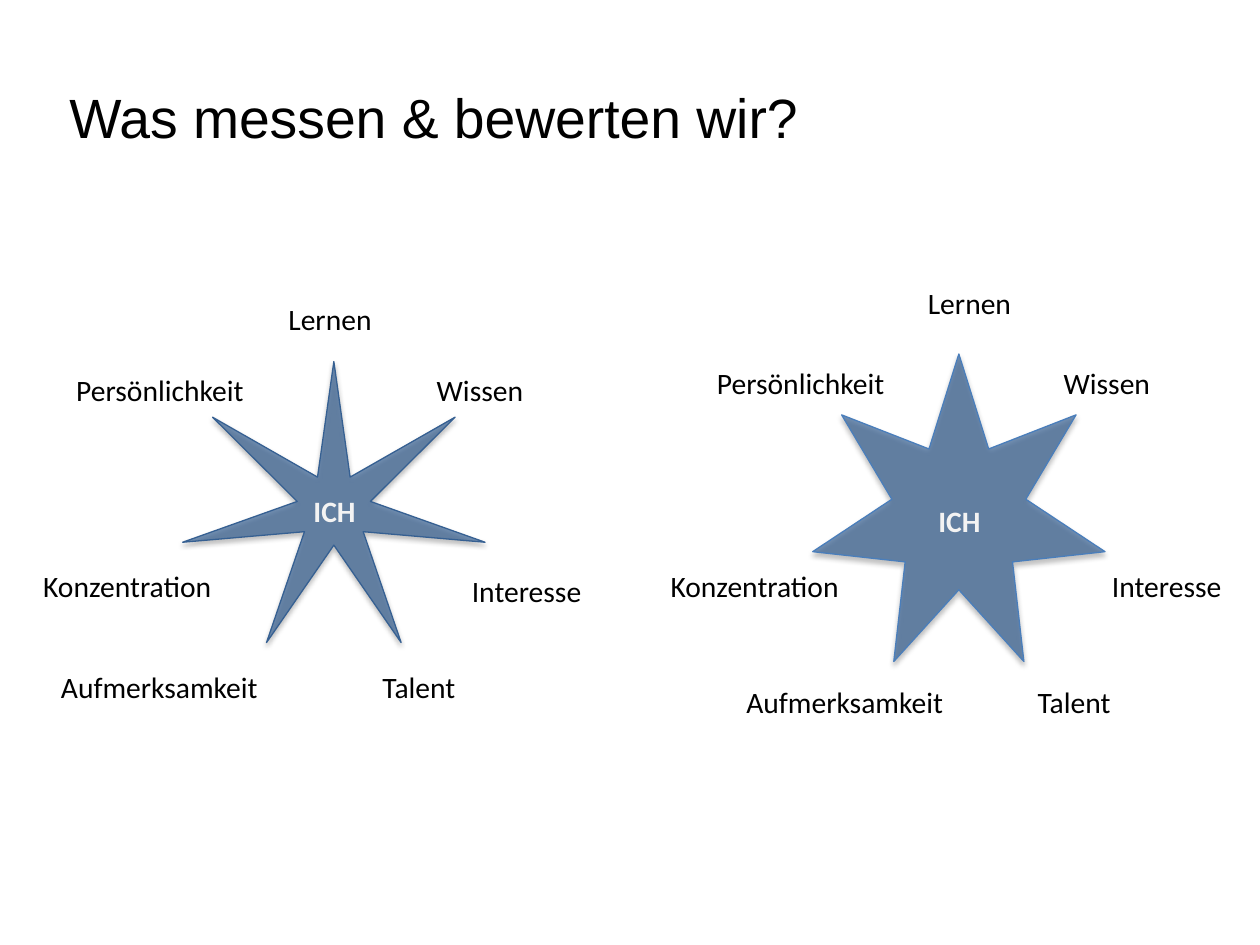
from dataclasses import dataclass

import pptx
import pptx.dml.color
import pptx.enum.shapes
import pptx.enum.text
import pptx.oxml
import pptx.oxml.ns
import pptx.util
from pptx.dml.color import RGBColor
from pptx.util import Inches

BLACK = RGBColor(0x00, 0x00, 0x00)
PALE = RGBColor(0xF3, 0xF3, 0xF3)
STAR_BLUE = RGBColor(0x36, 0x60, 0x92)
OUTLINE_BLUE = RGBColor(0x4A, 0x7E, 0xBB)

ALPHA_XML = '<a:alpha %s val="69000"/>' % pptx.oxml.ns.nsdecls("a")
SHADOW_XML = (
    '<a:outerShdw %s blurRad="38100" dist="22860" dir="5400000" rotWithShape="0">'
    '<a:srgbClr val="000000"><a:alpha val="35000"/></a:srgbClr></a:outerShdw>'
    % pptx.oxml.ns.nsdecls("a")
)


@dataclass
class Box:
    left: float
    top: float
    width: float
    height: float

    def lengths(self) -> list:
        return [Inches(n) for n in (self.left, self.top, self.width, self.height)]


@dataclass
class Label:
    text: str
    left: float
    top: float
    width: float


@dataclass
class StarDiagram:
    star: Box
    sharpness: float
    outline: RGBColor
    label_height: float
    inset: float
    labels: list[Label]
    center: Box


def add_text(shapes, box: Box, text: str, inset: float, size: float,
             font_name: str = "Calibri", color: RGBColor = BLACK, bold: bool = False,
             alignment=pptx.enum.text.PP_ALIGN.CENTER,
             anchor=pptx.enum.text.MSO_ANCHOR.TOP) -> None:
    frame = shapes.add_textbox(*box.lengths()).text_frame
    frame.word_wrap = True
    frame.vertical_anchor = anchor
    frame.margin_left = frame.margin_right = Inches(inset)
    frame.margin_top = frame.margin_bottom = Inches(inset)
    frame.text = text
    paragraph = frame.paragraphs[0]
    paragraph.alignment = alignment
    font = paragraph.runs[0].font
    font.name = font_name
    font.size = pptx.util.Pt(size)
    font.bold = bold
    font.color.rgb = color


def add_star(shapes, diagram: StarDiagram) -> None:
    star = shapes.add_shape(
        pptx.enum.shapes.MSO_SHAPE.STAR_7_POINT, *diagram.star.lengths())
    star.adjustments[0] = diagram.sharpness
    star.fill.solid()
    star.fill.fore_color.rgb = STAR_BLUE
    star.line.color.rgb = diagram.outline
    star.line.width = pptx.util.Pt(0.75)
    star.shadow.inherit = False
    # Translucent fill and soft shadow
    properties = star._element.spPr
    fill_color = properties.find(pptx.oxml.ns.qn("a:solidFill"))[0]
    fill_color.append(pptx.oxml.parse_xml(ALPHA_XML))
    effects = properties.find(pptx.oxml.ns.qn("a:effectLst"))
    effects.append(pptx.oxml.parse_xml(SHADOW_XML))


def add_diagram(slide, diagram: StarDiagram) -> None:
    shapes = slide.shapes.add_group_shape().shapes
    add_star(shapes, diagram)
    for label in diagram.labels:
        box = Box(label.left, label.top, label.width, diagram.label_height)
        add_text(shapes, box, label.text, diagram.inset, 16.9)
    add_text(shapes, diagram.center, "ICH", diagram.inset, 16.9, color=PALE, bold=True)


WIDE_STAR = StarDiagram(
    Box(6.45, 2.81, 2.32, 2.44), 0.229, OUTLINE_BLUE, 0.38, 0.05,
    [
        Label("Persönlichkeit", 5.5, 2.85, 1.71),
        Label("Lernen", 7.23, 2.21, 0.93),
        Label("Konzentration", 5.21, 4.46, 1.56),
        Label("Wissen", 8.32, 2.85, 0.93),
        Label("Aufmerksamkeit", 5.71, 5.38, 1.99),
        Label("Talent", 8.06, 5.38, 0.93),
        Label("Interesse", 8.48, 4.46, 1.56),
    ],
    Box(6.68, 3.94, 1.87, 0.44),
)
NARROW_STAR = StarDiagram(
    Box(1.45, 2.87, 2.4, 2.23), 0.121, STAR_BLUE, 0.36, 0.04,
    [
        Label("Persönlichkeit", 0.46, 2.91, 1.62),
        Label("Lernen", 2.07, 2.35, 1.1),
        Label("Konzentration", 0.2, 4.47, 1.62),
        Label("Wissen", 3.31, 2.91, 1),
        Label("Aufmerksamkeit", 0.27, 5.27, 1.99),
        Label("Talent", 2.95, 5.27, 0.75),
        Label("Interesse", 3.56, 4.51, 1.24),
    ],
    Box(1.91, 3.87, 1.49, 0.36),
)


def main() -> None:
    presentation = pptx.Presentation()
    presentation.slide_width = Inches(10)
    presentation.slide_height = Inches(7.5)
    slide = presentation.slides.add_slide(presentation.slide_layouts[6])

    # Star diagrams
    for diagram in (WIDE_STAR, NARROW_STAR):
        add_diagram(slide, diagram)

    # Title
    add_text(slide.shapes, Box(0.5, 0.3, 7.98, 1.25), "Was messen & bewerten wir?",
             0.05, 31.6, font_name="Arial",
             alignment=pptx.enum.text.PP_ALIGN.LEFT,
             anchor=pptx.enum.text.MSO_ANCHOR.MIDDLE)

    presentation.save("out.pptx")


if __name__ == "__main__":
    main()
